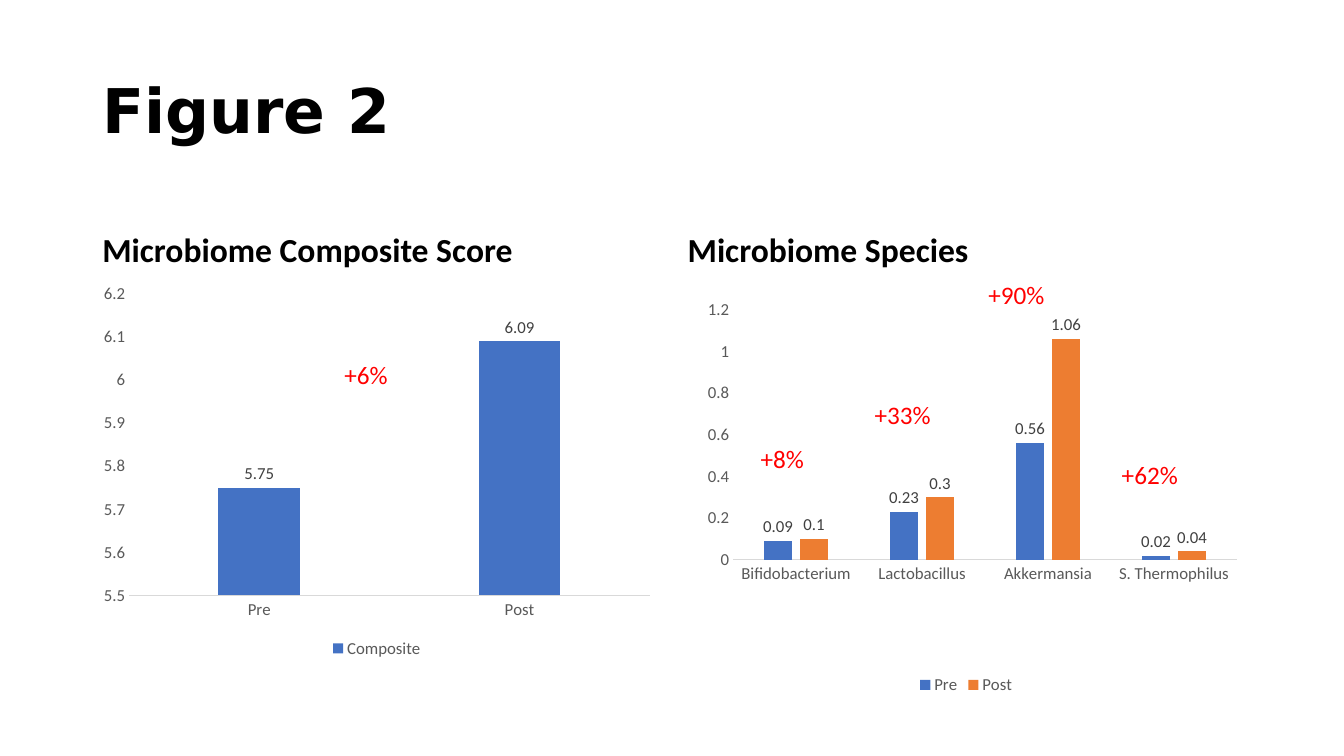
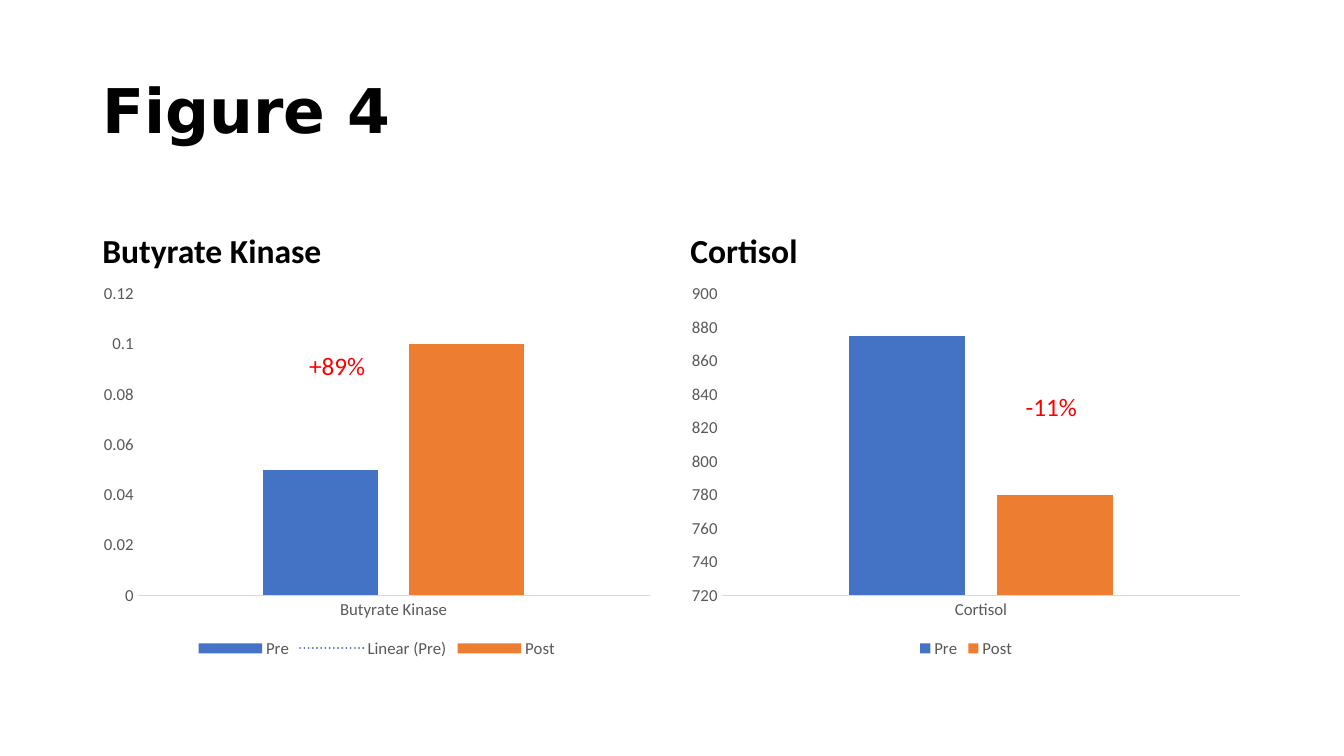
from lxml import etree
from pptx import Presentation
from pptx.chart.data import CategoryChartData
from pptx.dml.color import RGBColor
from pptx.enum.chart import XL_CHART_TYPE as ChartType
from pptx.enum.chart import XL_LABEL_POSITION as LabelPosition
from pptx.enum.chart import XL_LEGEND_POSITION as LegendPosition
from pptx.enum.chart import XL_TICK_MARK as TickMark
from pptx.enum.text import MSO_ANCHOR as Anchor
from pptx.enum.text import MSO_AUTO_SIZE as AutoSize
from pptx.enum.text import PP_ALIGN as Align
from pptx.oxml import parse_xml
from pptx.oxml.ns import nsdecls, qn
from pptx.util import Cm, Pt

COLORS = {
    "text": "000000", "pre": "4472C4", "post": "ED7D31", "change": "FF0000",
    "axis_text": "595959", "axis_line": "D9D9D9", "label": "404040",
}
BODY_FONT, TITLE_FONT = "Calibri", "DejaVu Sans"

# Columns as (left, width) in centimetres
LEFT, RIGHT = (2.33, 14.33), (17.15, 14.4)
CHART_TOP, CHART_HEIGHT = 6.96, 9.73


def rgb(name):
    return RGBColor.from_string(COLORS[name])


class Deck:
    """Holds the shared style and the current slide."""

    def __init__(self):
        self.deck = Presentation()
        self.deck.slide_width, self.deck.slide_height = Cm(33.87), Cm(19.05)
        self.page = None

    def style(self, font, size, color, bold=False, name=BODY_FONT):
        font.name, font.size, font.bold = name, Pt(size), bold
        font.color.rgb = rgb(color)

    def add_page(self, title):
        self.page = self.deck.slides.add_slide(self.deck.slide_layouts[5])
        box = self.page.shapes.title
        box.left, box.top, box.width, box.height = Cm(2.33), Cm(1.01), Cm(29.21), Cm(3.68)
        box.text_frame.auto_size = AutoSize.NONE
        box.text_frame.vertical_anchor = Anchor.MIDDLE
        para = box.text_frame.paragraphs[0]
        para.alignment, para.line_spacing = Align.LEFT, 0.9
        span = para.add_run()
        span.text = title
        self.style(span.font, 44, "text", True, TITLE_FONT)

    def add_text(self, text, left, top, width, height, size, color, bold=False):
        box = self.page.shapes.add_textbox(Cm(left), Cm(top), Cm(width), Cm(height))
        para = box.text_frame.paragraphs[0]
        span = para.add_run()
        span.text = text
        self.style(span.font, size, color, bold)
        return box.text_frame

    def add_heading(self, text, column, top=4.67, height=2.29):
        left, width = column
        frame = self.add_text(text, left, top, width, height, 24, "text", True)
        frame.word_wrap = True
        frame.vertical_anchor = Anchor.BOTTOM
        frame.paragraphs[0].line_spacing = 0.9

    def add_change(self, text, left, top, width=2.54):
        frame = self.add_text(text, left, top, width, 1.02, 18, "change")
        frame.word_wrap = False
        frame.auto_size = AutoSize.SHAPE_TO_FIT_TEXT

    def add_columns(self, column, categories, series, scale, labels=False,
                    top=CHART_TOP, height=CHART_HEIGHT):
        data = CategoryChartData()
        data.categories = categories
        for name, values in series:
            data.add_series(name, values)
        left, width = column
        chart = self.page.shapes.add_chart(
            ChartType.COLUMN_CLUSTERED, Cm(left), Cm(top), Cm(width), Cm(height), data).chart
        chart.has_title = False
        self.style(chart.font, 10, "text")

        # Columns
        plot = chart.plots[0]
        plot.gap_width, plot.overlap, plot.vary_by_categories = 219, -27, False
        for bars, color in zip(plot.series, ("pre", "post")):
            bars.format.fill.solid()
            bars.format.fill.fore_color.rgb = rgb(color)
            bars.invert_if_negative = False
        if labels:
            plot.has_data_labels = True
            plot.data_labels.show_value = True
            plot.data_labels.position = LabelPosition.OUTSIDE_END
            self.style(plot.data_labels.font, 12, "label")

        # Axes
        for axis in (chart.category_axis, chart.value_axis):
            axis.major_tick_mark = axis.minor_tick_mark = TickMark.NONE
            axis.has_major_gridlines = False
            self.style(axis.tick_labels.font, 12, "axis_text")
        line = chart.category_axis.format.line
        line.color.rgb, line.width = rgb("axis_line"), Pt(0.75)
        value_axis = chart.value_axis
        value_axis.format.line.fill.background()
        value_axis.minimum_scale, value_axis.maximum_scale, value_axis.major_unit = scale

        # Legend
        chart.has_legend = True
        chart.legend.position = LegendPosition.BOTTOM
        chart.legend.include_in_layout = False
        self.style(chart.legend.font, 12, "axis_text")
        return chart

    def place_plot(self, chart, x, y, width, height):
        area = chart.plots[0]._element.getparent()
        for old in area.findall(qn("c:layout")):
            area.remove(old)
        layout = parse_xml(f"<c:layout {nsdecls('c')}><c:manualLayout/></c:layout>")
        settings = [("layoutTarget", "inner"), ("xMode", "edge"), ("yMode", "edge"),
                    ("x", x), ("y", y), ("w", width), ("h", height)]
        for tag, value in settings:
            etree.SubElement(layout[0], qn(f"c:{tag}")).set("val", str(value))
        area.insert(0, layout)

    def add_trend(self, chart):
        """Dotted linear trend on the first series, with its legend entry off."""
        trend = parse_xml(
            f"<c:trendline {nsdecls('c', 'a')}><c:spPr><a:ln w='19050' cap='rnd'>"
            f"<a:solidFill><a:srgbClr val='{COLORS['pre']}'/></a:solidFill>"
            "<a:prstDash val='sysDot'/></a:ln></c:spPr><c:trendlineType val='linear'/>"
            "<c:dispRSqr val='0'/><c:dispEq val='0'/></c:trendline>")
        chart.plots[0].series[0]._element.find(qn("c:cat")).addprevious(trend)
        entry = parse_xml(f"<c:legendEntry {nsdecls('c')}><c:idx val='2'/>"
                          "<c:delete val='1'/></c:legendEntry>")
        chart.legend._element.find(qn("c:legendPos")).addnext(entry)


def main():
    deck = Deck()

    # Microbiome score and species
    deck.add_page("Figure 2")
    deck.add_heading("Microbiome Composite Score", LEFT, top=4.62)
    deck.add_columns(LEFT, ["Pre", "Post"], [("Composite", [5.75, 6.09])],
                     (5.5, 6.2, 0.1), labels=True)
    deck.add_heading("Microbiome Species", (17.08, 14.4), top=5.26, height=1.67)
    species = deck.add_columns(
        RIGHT, ["Bifidobacterium", "Lactobacillus", "Akkermansia", "S. Thermophilus"],
        [("Pre", [0.09, 0.23, 0.56, 0.02]), ("Post", [0.1, 0.3, 1.06, 0.04])],
        (0, 1.2, 0.2), labels=True, top=6.45, height=11.16)
    deck.place_plot(species, 0.092, 0.122, 0.882, 0.564)
    deck.add_change("+6%", 8.43, 8.92, 2.13)
    deck.add_change("+8%", 18.92, 11.05, 2.13)
    deck.add_change("+33%", 21.79, 9.93)
    deck.add_change("+90%", 24.66, 6.91)
    deck.add_change("+62%", 28.02, 11.46)

    # Butyrate kinase and cortisol
    deck.add_page("Figure 4")
    deck.add_heading("Butyrate Kinase", LEFT)
    kinase = deck.add_columns(LEFT, ["Butyrate Kinase"], [("Pre", [0.05]), ("Post", [0.1])],
                              (0, 0.12, 0.02))
    deck.add_trend(kinase)
    deck.add_heading("Cortisol", RIGHT)
    deck.add_columns(RIGHT, ["Cortisol"], [("Pre", [875]), ("Post", [780])], (720, 900, 20))
    deck.add_change("+89%", 7.54, 8.71)
    deck.add_change("-11%", 25.6, 9.73, 2.31)

    deck.deck.save("out.pptx")


if __name__ == "__main__":
    main()
